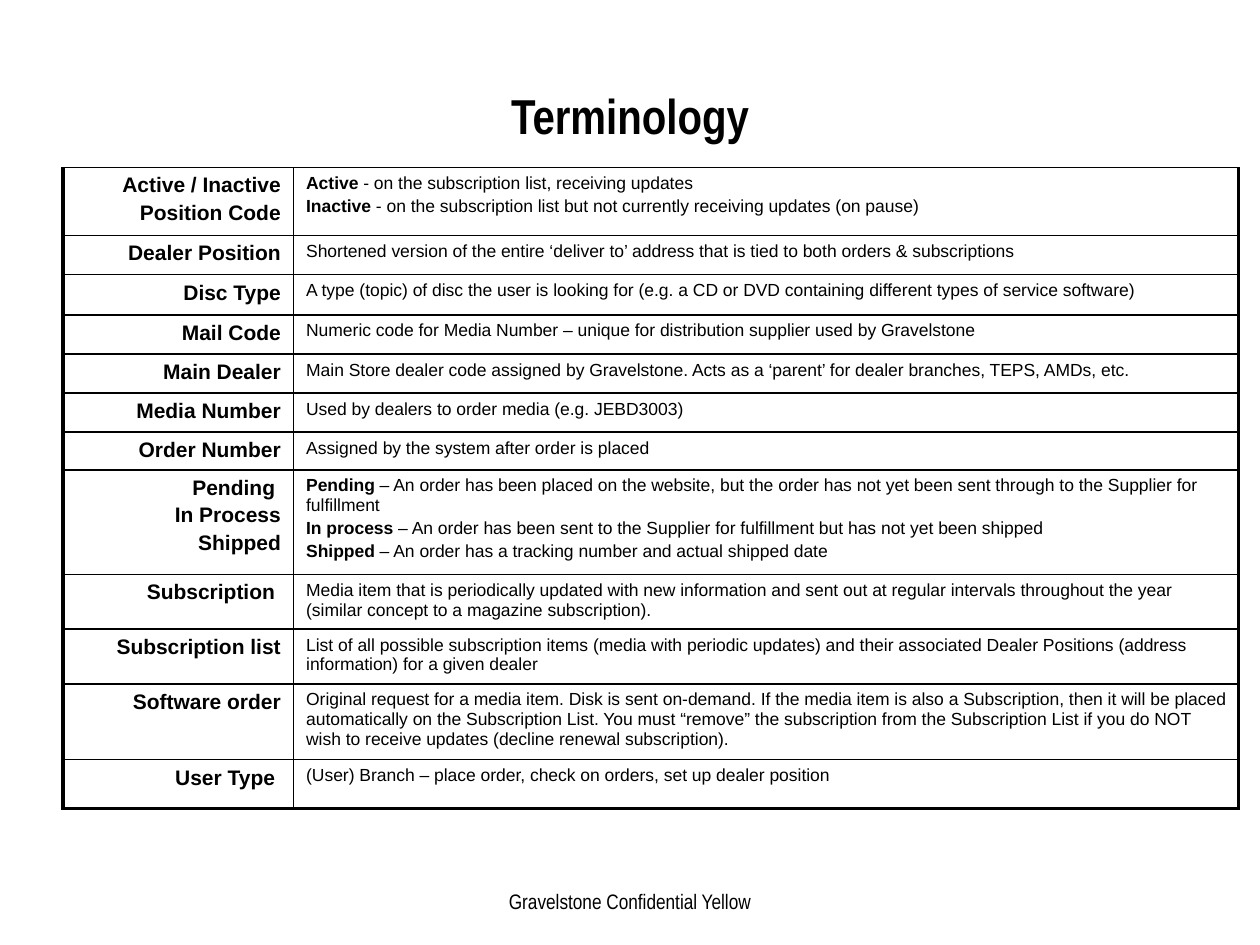
from dataclasses import dataclass

from lxml import etree
from pptx import Presentation
from pptx.dml.color import RGBColor
from pptx.enum.text import MSO_ANCHOR, PP_ALIGN
from pptx.oxml.ns import qn
from pptx.util import Inches, Pt

LEFT, CENTER, RIGHT = PP_ALIGN.LEFT, PP_ALIGN.CENTER, PP_ALIGN.RIGHT
MIDDLE = MSO_ANCHOR.MIDDLE


@dataclass(frozen=True)
class Theme:
    ink: str = "000000"
    heading_font: str = "Arial Narrow"
    body_font: str = "Arial"
    title_size: int = 28
    term_size: int = 12
    meaning_size: int = 10
    footer_size: int = 12
    paragraph_gap: float = 0.2  # share of the type size
    inner_line: float = 1
    outer_line: float = 2.25


THEME = Theme()
SLIDE_W, SLIDE_H = 10, 7.5
TITLE = "Terminology"
FOOTER = "Gravelstone Confidential Yellow"

# Row height, term lines, meaning lines as (bold lead, text)
ENTRIES = [
    (0.54, ["Active / Inactive", "Position Code"], [
        ("Active", " - on the subscription list, receiving updates"),
        ("Inactive", " - on the subscription list but not currently receiving updates (on pause)")]),
    (0.31, ["Dealer Position"], [
        ("", "Shortened version of the entire ‘deliver to’ address that is tied to both "
             "orders & subscriptions")]),
    (0.32, ["Disc Type"], [
        ("", "A type (topic) of disc the user is looking for (e.g. a CD or DVD containing "
             "different types of service software)")]),
    (0.31, ["Mail Code"], [
        ("", "Numeric code for Media Number – unique for distribution supplier used by Gravelstone")]),
    (0.31, ["Main Dealer"], [
        ("", "Main Store dealer code assigned by Gravelstone. Acts as a ‘parent’ for dealer "
             "branches, TEPS, AMDs, etc.")]),
    (0.31, ["Media Number"], [("", "Used by dealers to order media (e.g. JEBD3003)")]),
    (0.3, ["Order Number"], [("", "Assigned by the system after order is placed")]),
    (0.83, ["Pending ", "In Process", "Shipped"], [
        ("Pending", " – An order has been placed on the website, but the order has not yet "
                    "been sent through to the Supplier for fulfillment"),
        ("In process", " – An order has been sent to the Supplier for fulfillment but has "
                       "not yet been shipped"),
        ("Shipped", " – An order has a tracking number and actual shipped date")]),
    (0.43, ["Subscription "], [
        ("", "Media item that is periodically updated with new information and sent out at "
             "regular intervals throughout the year (similar concept to a magazine subscription).")]),
    (0.43, ["Subscription list"], [
        ("", "List of all possible subscription items (media with periodic updates) and their "
             "associated Dealer Positions (address information) for a given dealer")]),
    (0.6, ["Software order"], [
        ("", "Original request for a media item. Disk is sent on-demand. If the media item is "
             "also a Subscription, then it will be placed automatically on the Subscription "
             "List. You must “remove” the subscription from the Subscription List if you do "
             "NOT wish to receive updates (decline renewal subscription).")]),
    (0.39, ["User Type "], [
        ("", "(User) Branch – place order, check on orders, set up dealer position")]),
]
TABLE_LEFT, TABLE_TOP = 0.5, 1.33
COLUMN_WIDTHS = (1.83, 7.5)


def write(frame, paragraphs, size, font, align):
    """Fill a text frame with paragraphs, each a list of (text, bold) runs."""
    for i, runs in enumerate(paragraphs):
        paragraph = frame.add_paragraph() if i else frame.paragraphs[0]
        paragraph.alignment = align
        if i:
            paragraph.space_before = Pt(size * THEME.paragraph_gap)
        for text, bold in runs:
            run = paragraph.add_run()
            run.text = text
            run.font.size = Pt(size)
            run.font.name = font
            run.font.bold = bold
            run.font.color.rgb = RGBColor.from_string(THEME.ink)


def add_heading(slide, text, top, height, width, size, bold, wrap):
    box = slide.shapes.add_textbox(
        Inches((SLIDE_W - width) / 2), Inches(top), Inches(width), Inches(height))
    frame = box.text_frame
    frame.word_wrap = wrap
    frame.vertical_anchor = MIDDLE
    write(frame, [[(text, bold)]], size, THEME.heading_font, CENTER)


def set_borders(cell, **widths):
    properties = cell._tc.get_or_add_tcPr()
    for side, width in widths.items():
        line = etree.SubElement(properties, qn(f"a:ln{side}"), w=str(Pt(width)))
        fill = etree.SubElement(line, qn("a:solidFill"))
        etree.SubElement(fill, qn("a:srgbClr"), val=THEME.ink)


def add_glossary(slide):
    heights = [height for height, _, _ in ENTRIES]
    table = slide.shapes.add_table(
        len(ENTRIES), len(COLUMN_WIDTHS), Inches(TABLE_LEFT), Inches(TABLE_TOP),
        Inches(sum(COLUMN_WIDTHS)), Inches(sum(heights))).table
    table.first_row = table.horz_banding = False
    for column, width in zip(table.columns, COLUMN_WIDTHS):
        column.width = Inches(width)

    inner, outer = THEME.inner_line, THEME.outer_line
    for r, (height, terms, meanings) in enumerate(ENTRIES):
        table.rows[r].height = Inches(height)
        term_cell, meaning_cell = table.cell(r, 0), table.cell(r, 1)
        write(term_cell.text_frame, [[(term, True)] for term in terms],
              THEME.term_size, THEME.body_font, RIGHT)
        write(meaning_cell.text_frame,
              [[(text, bold) for text, bold in ((lead, True), (rest, False)) if text]
               for lead, rest in meanings],
              THEME.meaning_size, THEME.body_font, LEFT)
        bottom = outer if r == len(ENTRIES) - 1 else inner
        set_borders(term_cell, L=outer, R=inner, T=inner, B=bottom)
        set_borders(meaning_cell, L=inner, R=outer, T=inner, B=bottom)
        for cell in (term_cell, meaning_cell):
            cell.fill.background()


def main():
    deck = Presentation()
    deck.slide_width, deck.slide_height = Inches(SLIDE_W), Inches(SLIDE_H)
    slide = deck.slides.add_slide(deck.slide_layouts[6])
    add_heading(slide, FOOTER, 6.98, 0.35, 2.33, THEME.footer_size, False, False)
    add_heading(slide, TITLE, 0.5, 0.83, 8.67, THEME.title_size, True, True)
    add_glossary(slide)
    deck.save("out.pptx")


if __name__ == "__main__":
    main()
